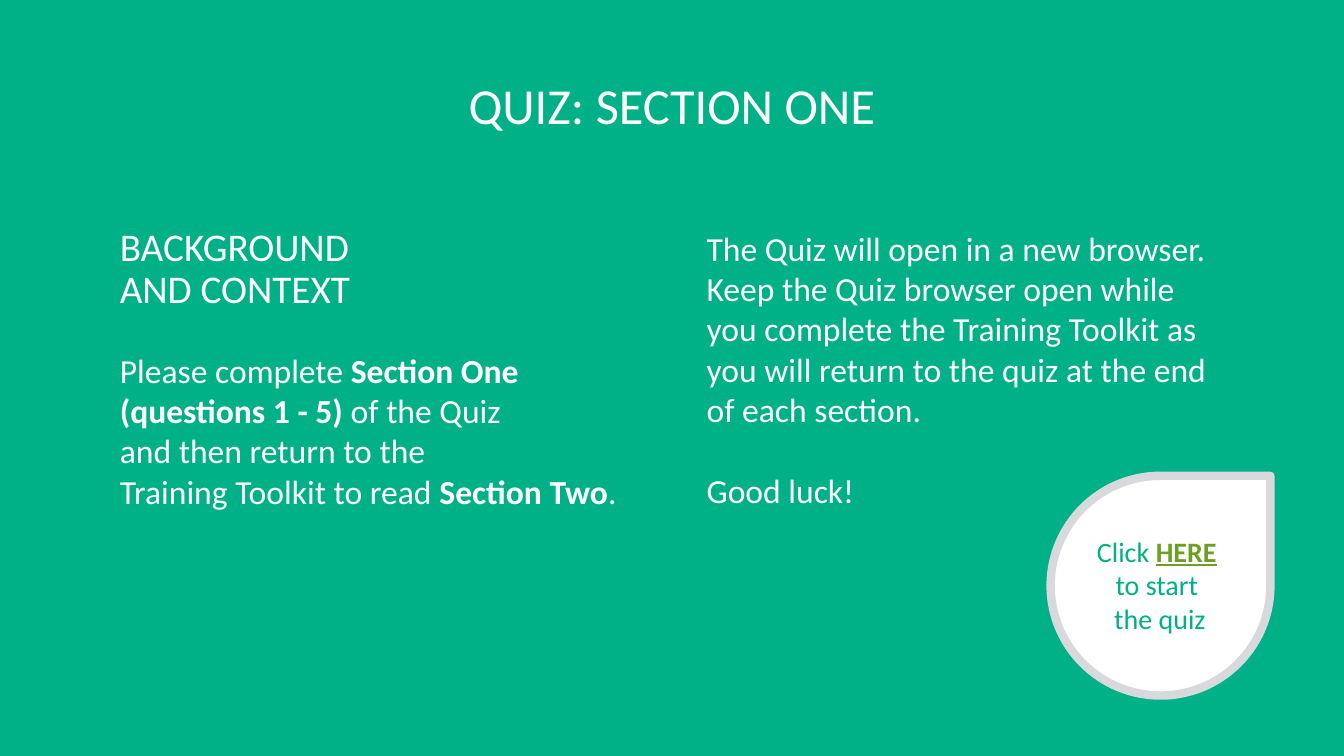
from dataclasses import dataclass

from pptx import Presentation
from pptx import util as u
from pptx.dml.color import RGBColor
from pptx.enum import shapes, text


@dataclass(frozen=True)
class Theme:
    font: str = "Calibri"
    green: str = "00B087"
    white: str = "FFFFFF"
    grey: str = "D8D9DC"
    link: str = "6B9F25"
    title: int = 36
    heading: int = 28
    body: int = 24
    button: int = 20


class Deck:
    def __init__(self, theme):
        self.theme = theme
        self.prs = Presentation()
        self.prs.slide_width = u.Inches(13.33)
        self.prs.slide_height = u.Inches(7.5)
        self.s = self.prs.slides.add_slide(self.prs.slide_layouts[6])

    def shape(self, kind, box, fill, line=None, width=0):
        sp = self.s.shapes.add_shape(kind, *map(u.Inches, box))
        sp.shadow.inherit = False
        sp.fill.solid()
        sp.fill.fore_color.rgb = RGBColor.from_string(fill)
        if line:
            sp.line.color.rgb = RGBColor.from_string(line)
            sp.line.width = u.Pt(width)
        else:
            sp.line.fill.background()

    def text(self, box, paragraphs, size, color, align=text.PP_ALIGN.LEFT,
             spacing=1.0, gap=0):
        """Each paragraph is a list of (words, style); a newline breaks the line."""
        tf = self.s.shapes.add_textbox(*map(u.Inches, box)).text_frame
        tf.word_wrap = True
        for i, runs in enumerate(paragraphs):
            p = tf.add_paragraph() if i else tf.paragraphs[0]
            p.alignment = align
            p.line_spacing = spacing
            if i:
                p.space_before = u.Pt(gap)
            for words, style in runs:
                for j, part in enumerate(words.split("\n")):
                    if j:
                        p.add_line_break()
                    self.run(p, part, size, style.get("color", color), style)

    def run(self, p, words, size, color, style):
        r = p.add_run()
        r.text = words
        r.font.name = self.theme.font
        r.font.size = u.Pt(size)
        r.font.bold = style.get("bold", False)
        r.font.underline = style.get("underline", False)
        r.font.color.rgb = RGBColor.from_string(color)


def main():
    t = Theme()
    deck = Deck(t)
    plain, bold = {}, {"bold": True}
    link = {"bold": True, "underline": True, "color": t.link}
    center = text.PP_ALIGN.CENTER

    # Background
    deck.shape(shapes.MSO_SHAPE.RECTANGLE, (0, 0, 13.33, 7.5), t.green)

    # Left column
    deck.text((1.09, 2.21, 4.37, 1.04),
              [[("BACKGROUND \nAND CONTEXT", plain)]],
              t.heading, t.white, spacing=0.9)
    deck.text((1.09, 3.42, 5.14, 1.72),
              [[("Please complete ", plain),
                ("Section One (questions 1 - 5)", bold),
                (" of the Quiz \nand then return to the \n"
                 "Training Toolkit to read ", plain),
                ("Section Two", bold),
                (".", plain)]],
              t.body, t.white)

    # Right column
    deck.text((6.91, 2.21, 5.23, 2.93),
              [[("The Quiz will open in a new browser. Keep the Quiz browser "
                 "open while you complete the Training Toolkit as you will "
                 "return to the quiz at the end of each section.", plain)],
               [("Good luck!", plain)]],
              t.body, t.white, gap=29)

    # Quiz button
    deck.shape(shapes.MSO_SHAPE.TEAR, (10.42, 4.72, 2.18, 2.18),
               t.white, t.grey, 6)
    deck.text((10.62, 5.25, 1.77, 1.11),
              [[("Click ", plain), ("HERE", link),
                (" \nto start \nthe quiz", plain)]],
              t.button, t.green, center)

    # Title
    deck.text((0, 0.75, 13.33, 0.61), [[("QUIZ: SECTION ONE", plain)]],
              t.title, t.white, center, spacing=0.9)

    deck.prs.save("out.pptx")


if __name__ == "__main__":
    main()
